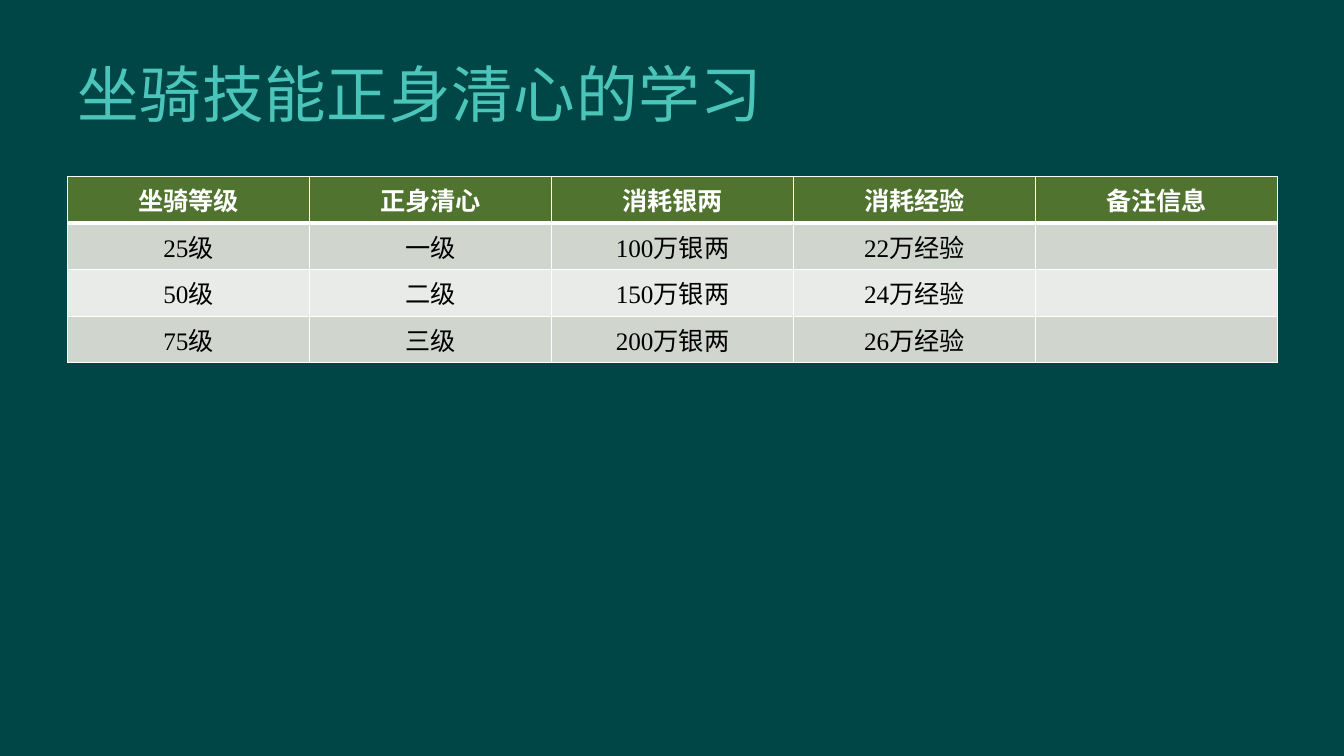
import pptx
import pptx.util
import pptx.dml.color
import pptx.enum.text
from dataclasses import dataclass
from lxml import etree
from pptx.util import Inches

DRAWING_NS = "http://schemas.openxmlformats.org/drawingml/2006/main"


@dataclass(frozen=True)
class Theme:
    background: str = "004646"
    title: str = "4BC5B9"
    header_fill: str = "50742F"
    header_text: str = "FFFFFF"
    body_text: str = "000000"
    bands: tuple = ("D0D6CD", "E9EBE8")
    border: str = "FFFFFF"
    title_font: str = "Lato"
    table_font: str = "Times New Roman"
    title_size: int = 44
    table_size: int = 18
    thin_line: int = 1
    thick_line: int = 3


THEME = Theme()
TITLE = "坐骑技能正身清心的学习"
SKILL_ROWS = [
    ("坐骑等级", "正身清心", "消耗银两", "消耗经验", "备注信息"),
    ("25级", "一级", "100万银两", "22万经验", ""),
    ("50级", "二级", "150万银两", "24万经验", ""),
    ("75级", "三级", "200万银两", "26万经验", ""),
]


def rgb(value):
    return pptx.dml.color.RGBColor.from_string(value)


def set_font(font, name, size, color, bold=False):
    font.name = name
    font.size = pptx.util.Pt(size)
    font.color.rgb = rgb(color)
    font.bold = bold


def set_borders(cell, top, bottom):
    """Draw all four cell edges; top and bottom are widths in points."""
    properties = cell._tc.get_or_add_tcPr()
    widths = {"lnL": THEME.thin_line, "lnR": THEME.thin_line, "lnT": top, "lnB": bottom}
    for index, (edge, width) in enumerate(widths.items()):
        line = etree.Element(f"{{{DRAWING_NS}}}{edge}", w=str(pptx.util.Pt(width)))
        fill = etree.SubElement(line, f"{{{DRAWING_NS}}}solidFill")
        etree.SubElement(fill, f"{{{DRAWING_NS}}}srgbClr", val=THEME.border)
        properties.insert(index, line)


def place_title(page, text, left, top, width, height):
    title = page.shapes.title
    title.left, title.top, title.width, title.height = left, top, width, height
    frame = title.text_frame
    frame.word_wrap = True
    frame.vertical_anchor = pptx.enum.text.MSO_ANCHOR.MIDDLE
    para = frame.paragraphs[0]
    para.alignment = pptx.enum.text.PP_ALIGN.LEFT
    span = para.add_run()
    span.text = text
    set_font(span.font, THEME.title_font, THEME.title_size, THEME.title)
    span._r.get_or_add_rPr().set("spc", "50")


def format_cell(cell, text, row_index):
    is_header = row_index == 0
    cell.text = text
    cell.fill.solid()
    fill = THEME.header_fill if is_header else THEME.bands[(row_index - 1) % 2]
    cell.fill.fore_color.rgb = rgb(fill)
    set_borders(
        cell,
        top=THEME.thick_line if row_index == 1 else THEME.thin_line,
        bottom=THEME.thick_line if is_header else THEME.thin_line,
    )
    para = cell.text_frame.paragraphs[0]
    para.alignment = pptx.enum.text.PP_ALIGN.CENTER
    color = THEME.header_text if is_header else THEME.body_text
    set_font(para.font, THEME.table_font, THEME.table_size, color, bold=is_header)


def place_table(page, rows, left, top, width, height):
    frame = page.shapes.add_table(len(rows), len(rows[0]), left, top, width, height)
    for row_index, row in enumerate(rows):
        for column_index, text in enumerate(row):
            format_cell(frame.table.cell(row_index, column_index), text, row_index)


def build_table_slide(deck):
    page = deck.slides.add_slide(deck.slide_layouts.get_by_name("Title Only"))
    page.background.fill.solid()
    page.background.fill.fore_color.rgb = rgb(THEME.background)
    margin = Inches(0.67)
    place_title(page, TITLE, margin, Inches(0.3), Inches(11.34), Inches(1.25))
    place_table(page, SKILL_ROWS, margin, Inches(1.75), Inches(12), Inches(1.62))


def main():
    deck = pptx.Presentation()
    deck.slide_width = Inches(13.33)
    deck.slide_height = Inches(7.5)
    build_table_slide(deck)
    deck.save("out.pptx")


if __name__ == "__main__":
    main()
